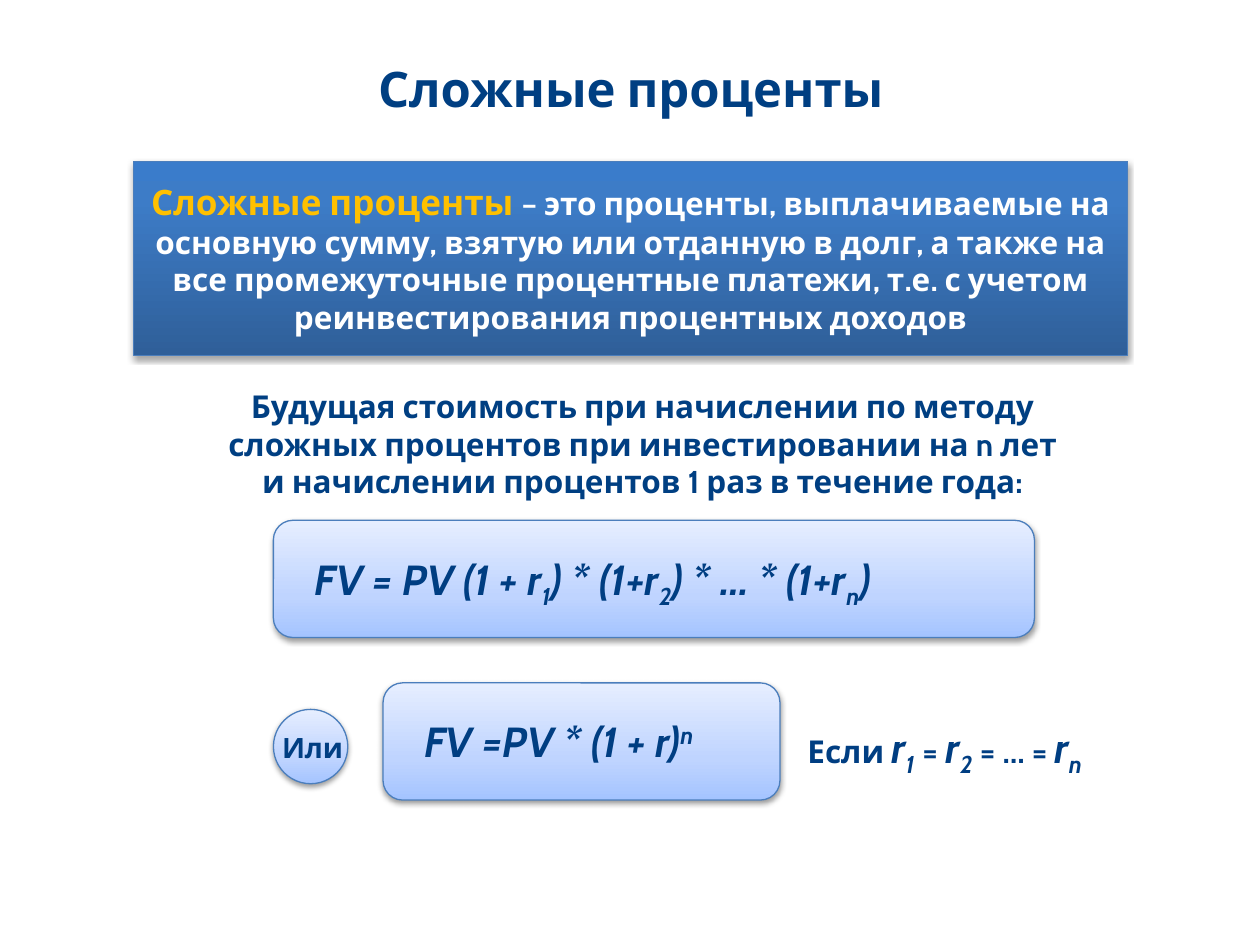
import pptx
import pptx.dml.color
import pptx.enum.shapes
import pptx.enum.text
import pptx.oxml
import pptx.oxml.ns
import pptx.util
from pptx.util import Inches

SHAPE = pptx.enum.shapes.MSO_SHAPE
CENTER = pptx.enum.text.PP_ALIGN.CENTER
MIDDLE = pptx.enum.text.MSO_ANCHOR.MIDDLE
GROW = pptx.enum.text.MSO_AUTO_SIZE.SHAPE_TO_FIT_TEXT
FIXED = pptx.enum.text.MSO_AUTO_SIZE.NONE

THEME = {
    "font": "Cabin",
    "navy": "003F82", "ink": "003E82", "gold": "FFC000", "white": "FFFFFF",
    "line": "4B7EBC",
    "banner": [(0, "2F5F99"), (80, "3D7CC7"), (100, "3A7CCB")],
    "card": [(0, "A4C4FF"), (35, "BFD4FF"), (100, "E6EEFF")],
    "title": 28, "formula": 24, "lead": 20, "body": 18, "label": 16,
}


def write(sp, runs, frame, para):
    """Fill a shape with one paragraph of (text, size, colour, italic, baseline) runs."""
    tf = sp.text_frame
    for name, value in frame.items():
        setattr(tf, name, value)
    p = tf.paragraphs[0]
    for name, value in para.items():
        setattr(p, name, value)
    for text, size, color, italic, baseline in runs:
        r = p.add_run()
        r.text = text
        font = {"name": THEME["font"], "size": pptx.util.Pt(THEME[size]),
                "bold": True, "italic": italic}
        for name, value in font.items():
            setattr(r.font, name, value)
        r.font.color.rgb = pptx.dml.color.RGBColor.from_string(THEME[color])
        if baseline:
            r._r.get_or_add_rPr().set("baseline", str(baseline * 1000))


def add_panel(shapes, kind, box, stops, alpha, distance):
    """Add a shape with a vertical gradient, a thin outline and a soft shadow."""
    sp = shapes.add_shape(kind, *map(Inches, box))
    sp.fill.gradient()
    sp.fill.gradient_angle = 90
    ns = pptx.oxml.ns.nsdecls("a")
    gs_list = sp._element.spPr.find(".//" + pptx.oxml.ns.qn("a:gsLst"))
    for gs in list(gs_list):
        gs_list.remove(gs)
    for position, color in THEME[stops]:
        gs_list.append(pptx.oxml.parse_xml(
            f'<a:gs {ns} pos="{position * 1000}"><a:srgbClr val="{color}"/></a:gs>'))
    sp.line.color.rgb = pptx.dml.color.RGBColor.from_string(THEME["line"])
    sp.line.width = pptx.util.Pt(0.75)
    sp._element.spPr.append(pptx.oxml.parse_xml(
        f'<a:effectLst {ns}><a:outerShdw blurRad="40000" dist="{distance}" '
        f'dir="5400000" rotWithShape="0"><a:srgbClr val="000000">'
        f'<a:alpha val="{alpha * 1000}"/></a:srgbClr></a:outerShdw></a:effectLst>'))
    return sp


prs = pptx.Presentation()
prs.slide_width, prs.slide_height = Inches(10), Inches(7.5)
s = prs.slides.add_slide(prs.slide_layouts[5])
LEFT, WIDTH = 1.06, 7.89

# Title
title = s.shapes.title
title.left, title.top, title.width, title.height = map(Inches, (LEFT, 0.47, WIDTH, 0.45))
write(title, [("Сложные проценты", "title", "navy", False, 0)],
      {"word_wrap": True, "auto_size": FIXED, "vertical_anchor": MIDDLE},
      {"alignment": CENTER})

# Definition
banner = add_panel(s.shapes, SHAPE.RECTANGLE, (LEFT, 1.28, WIDTH, 1.54), "banner", 35, 23000)
write(banner, [
    ("Сложные проценты ", "lead", "gold", False, 0),
    ("– это проценты, выплачиваемые на основную сумму, взятую или отданную в долг, "
     "а также на все промежуточные процентные платежи, т.е. с учетом "
     "реинвестирования процентных доходов", "body", "white", False, 0),
], {"word_wrap": True, "vertical_anchor": MIDDLE}, {"alignment": CENTER})

# Formula cards; the short form and its badge are grouped
group = s.shapes.add_group_shape()
for shapes, kind, box in [
    (s.shapes, SHAPE.ROUNDED_RECTANGLE, (2.17, 4.13, 6.04, 0.93)),
    (group.shapes, SHAPE.OVAL, (2.17, 5.63, 0.59, 0.59)),
    (group.shapes, SHAPE.ROUNDED_RECTANGLE, (3.04, 5.42, 3.15, 0.93)),
]:
    add_panel(shapes, kind, box, "card", 38, 20000)

# Text and formulas
spaced = {"space_after": pptx.util.Pt(3)}
tight = {"line_spacing": 0.85, **spaced}
SUB, SUP = -25, 30
texts = [
    (s.shapes, (1.71, 3.02, 6.78, 1.01), True, {"alignment": CENTER, **spaced}, [
        ("Будущая стоимость при начислении по методу сложных ", "body", "navy", False, 0),
        ("процентов при инвестировании ", "body", "ink", False, 0),
        ("на n лет и начислении процентов 1 раз в течение года:", "body", "navy", False, 0),
    ]),
    (s.shapes, (6.31, 5.7, 2.78, 0.44), True, tight, [
        ("Если ", "body", "ink", False, 0),
        ("r", "formula", "ink", True, 0),
        ("1", "formula", "ink", True, SUB),
        (" ", "lead", "ink", False, 0),
        ("=", "body", "ink", False, 0),
        (" ", "lead", "ink", False, 0),
        ("r", "formula", "ink", True, 0),
        ("2", "formula", "ink", True, SUB),
        (" = … = ", "body", "ink", False, 0),
        ("r", "formula", "ink", True, 0),
        ("n", "formula", "ink", True, SUB),
    ]),
    (s.shapes, (2.4, 4.34, 5.63, 0.5), False, {}, [
        (text, "formula", "ink", True, baseline) for text, baseline in [
            ("FV = PV (1 + r", 0), ("1", SUB), (") * (1+r", 0), ("2", SUB),
            (") * … * (1+r", 0), ("n", SUB), (")", 0)]
    ]),
    (group.shapes, (2.14, 5.79, 0.69, 0.33), True, tight, [
        ("Или", "label", "ink", False, 0),
    ]),
    (group.shapes, (3.27, 5.63, 2.92, 0.5), True, {}, [
        ("FV =PV * (1 + r)", "formula", "ink", True, 0),
        ("n", "formula", "ink", True, SUP),
    ]),
]
for shapes, box, wrap, para, runs in texts:
    sp = shapes.add_textbox(*map(Inches, box))
    write(sp, runs, {"word_wrap": wrap, "auto_size": GROW}, para)

prs.save("out.pptx")
